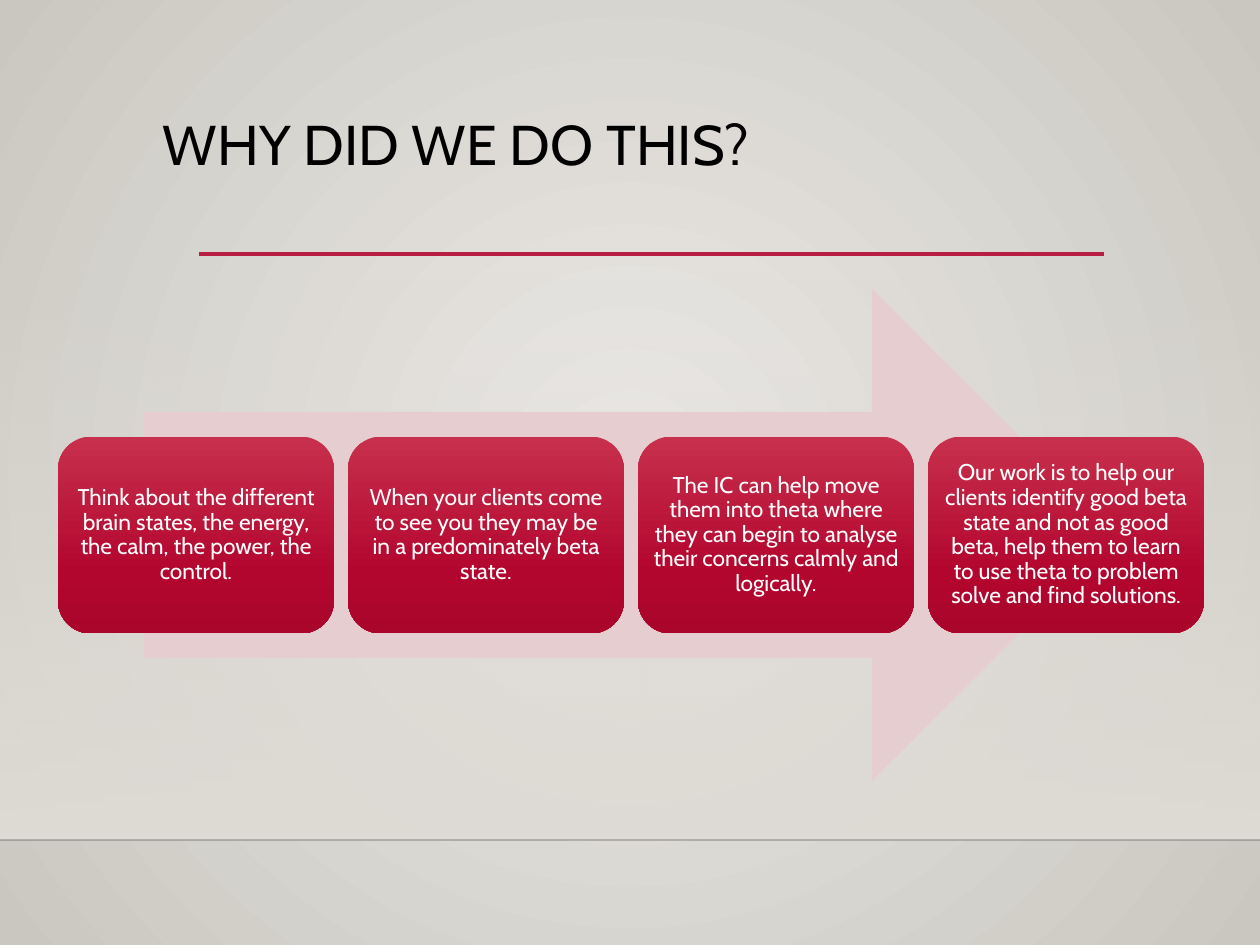
from lxml import etree
from pptx import Presentation
from pptx import util as u
from pptx.dml.color import RGBColor
from pptx.enum import shapes, text
from pptx.oxml import parse_xml
from pptx.oxml.ns import nsdecls, qn

PX = 914400 / 126
FONT = "Cabin"
HUES = {
    "ink": "000000", "white": "FFFFFF", "rule": "B71E42", "floor": "000001",
    "pale": "ECEAE7", "edge": "CAC7C1", "haze": "DFDBD5", "arrow": "E6CDCF",
    "top": "C7304C", "mid": "B3062F", "base": "AA062C",
}
STEPS = [
    "Think about the different brain states, the energy, the calm, the power, the control.",
    "When your clients come to see you they may be in a predominately beta state.",
    "The IC can help move them into theta where they can begin to analyse "
    "their concerns calmly and logically.",
    "Our work is to help our clients identify good beta state and not as good beta, "
    "help them to learn to use theta to problem solve and find solutions.",
]


def px(*vals):
    return [u.Emu(round(v * PX)) for v in vals]


def hue(name):
    return RGBColor.from_string(HUES[name])


def fade(node, stops, circle=False):
    """Swap the solid fill in node for a gradient of (percent, hue, alpha) stops."""
    marks = "".join(
        f'<a:gs pos="{pos * 1000}"><a:srgbClr val="{HUES[name]}">'
        f'<a:alpha val="{alpha * 1000}"/></a:srgbClr></a:gs>'
        for pos, name, alpha in stops)
    way = '<a:lin ang="5400000" scaled="0"/>'
    if circle:
        way = ('<a:path path="circle"><a:fillToRect l="50000" t="50000" '
               'r="50000" b="50000"/></a:path>')
    new = parse_xml(f'<a:gradFill {nsdecls("a")} rotWithShape="1">'
                    f'<a:gsLst>{marks}</a:gsLst>{way}</a:gradFill>')
    node.replace(node.find(qn("a:solidFill")), new)


def add_form(slide, kind, box, name):
    form = slide.shapes.add_shape(kind, *px(*box))
    form.shadow.inherit = False
    form.fill.solid()
    form.fill.fore_color.rgb = hue(name)
    form.line.fill.background()
    return form


def add_rule(slide, left, top, right, name, width, alpha=100):
    rule = slide.shapes.add_connector(
        shapes.MSO_CONNECTOR.STRAIGHT, *px(left, top, right, top))
    rule.line.color.rgb = hue(name)
    rule.line.width = u.Pt(width)
    props = rule._element.spPr
    tint = next(props.iter(qn("a:srgbClr")))
    etree.SubElement(tint, qn("a:alpha")).set("val", str(alpha * 1000))
    etree.SubElement(props, qn("a:effectLst"))


def write(form, words, size, name, align, anchor, pads):
    frame = form.text_frame
    frame.word_wrap = True
    frame.vertical_anchor = anchor
    (frame.margin_left, frame.margin_top,
     frame.margin_right, frame.margin_bottom) = px(*pads)
    para = frame.paragraphs[0]
    para.text = words
    para.alignment = align
    para.line_spacing = 0.9
    para.font.name = FONT
    para.font.size = u.Pt(size)
    para.font.color.rgb = hue(name)


def add_back(slide, wide, high):
    # Radial backdrop, haze and floor line
    slide.background.fill.solid()
    fade(slide._element.cSld.bg.bgPr,
         [(0, "pale", 100), (100, "edge", 100)], circle=True)
    floor = 840
    haze = add_form(slide, shapes.MSO_SHAPE.RECTANGLE,
                    (0, 277, wide, floor - 277), "haze")
    fade(haze._element.spPr, [(0, "haze", 0), (100, "haze", 100)])
    add_rule(slide, 0, floor, wide, "floor", 1, 20)


def add_title(slide, left, top, wide, high):
    # Heading and the rule below it
    add_rule(slide, left + 49, top + 143, left + 954, "rule", 2.5)
    head = slide.shapes.add_textbox(*px(left, top, wide, high))
    write(head, "WHY DID WE DO THIS?", 32, "ink", text.PP_ALIGN.LEFT,
          text.MSO_ANCHOR.TOP, (13, 6, 13, 6))


def add_flow(slide, left, top, wide, high):
    # Arrow behind the steps
    inset = round(wide * 0.075)
    add_form(slide, shapes.MSO_SHAPE.RIGHT_ARROW,
             (left + inset, top, wide - 2 * inset, high), "arrow")
    # Evenly spaced step cards
    gap = 14
    card_w = (wide - gap * (len(STEPS) - 1)) / len(STEPS)
    card_h = high * 0.4
    for i, words in enumerate(STEPS):
        card = add_form(slide, shapes.MSO_SHAPE.ROUNDED_RECTANGLE,
                        (left + i * (card_w + gap), top + (high - card_h) / 2,
                         card_w, card_h), "mid")
        fade(card._element.spPr,
             [(0, "top", 100), (69, "mid", 100), (100, "base", 100)])
        # The rounded corners add 9 px to each margin
        write(card, words, 13, "white", text.PP_ALIGN.CENTER,
              text.MSO_ANCHOR.MIDDLE, (6, 6, 6, 6))


def main():
    deck = Presentation()
    deck.slide_width, deck.slide_height = px(1260, 945)
    slide = deck.slides.add_slide(deck.slide_layouts[6])
    add_back(slide, 1260, 945)
    add_title(slide, 150, 111, 993, 145)
    add_flow(slide, 58, 289, 1146, 492)
    deck.save("out.pptx")


if __name__ == "__main__":
    main()
